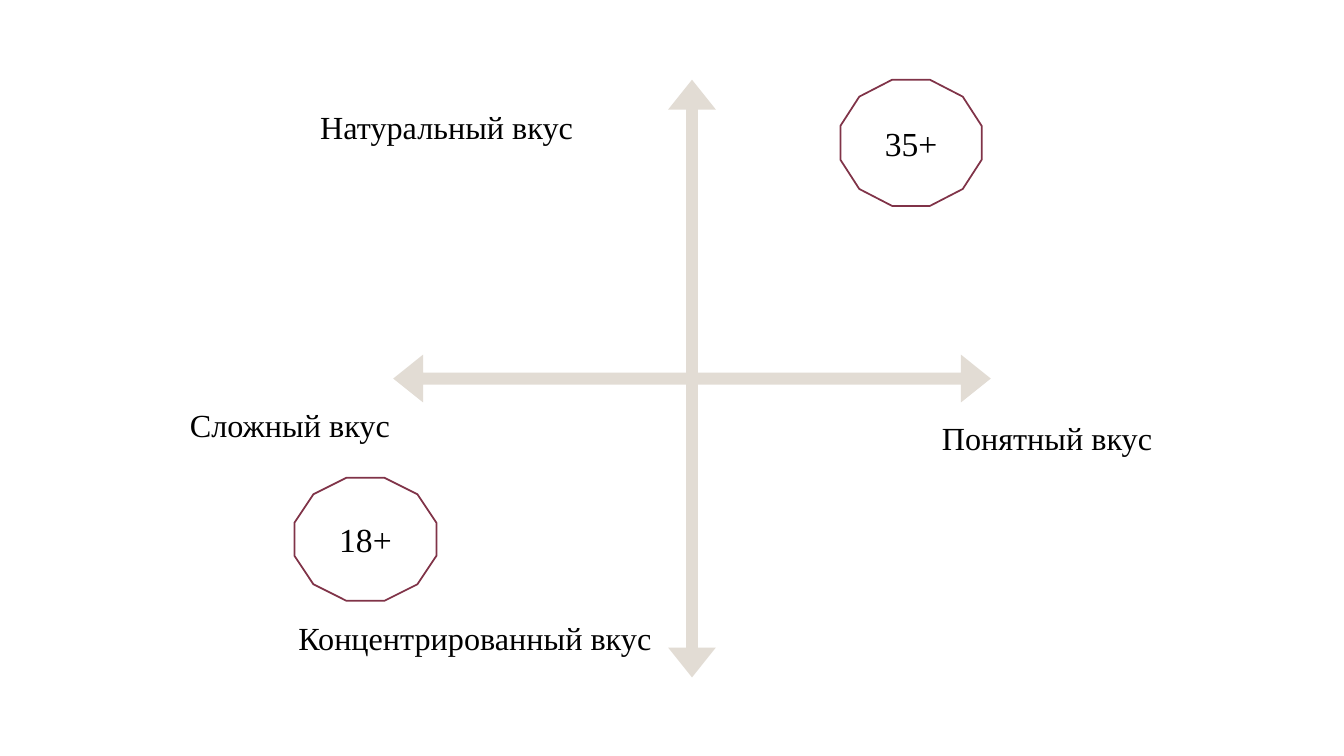
from pptx import Presentation
from pptx.dml.color import RGBColor
from pptx.enum.shapes import MSO_SHAPE
from pptx.enum.text import MSO_ANCHOR, PP_ALIGN
from pptx.util import Cm, Pt

COLORS = {"axes": "E2DCD4", "outline": "803348", "fill": "FFFFFF", "text": "000000"}
FONT = "Times New Roman"

# Left, top, width, height in centimetres; the items are offset from the map corner.
MAP_BOX = (9.91, 2.01, 15.06, 15.06)
AXIS_LABELS = [
    ("Натуральный вкус", (-3.97, 0.2, 10.64, 2.11)),
    ("Сложный вкус", (-7.12, 8.1, 9.04, 1.32)),
    ("Концентрированный вкус", (-3.61, 13.28, 11.35, 1.68)),
    ("Понятный вкус", (11.91, 8.3, 9.14, 1.55)),
]
AGE_GROUPS = [
    ("35+", (11.27, 0, 3.56, 3.18)),
    ("18+", (-2.49, 10.03, 3.58, 3.1)),
]


def color(name):
    return RGBColor.from_string(COLORS[name])


def lengths(box):
    return [Cm(value) for value in box]


def within(parent, box):
    """Shift a box by the corner of its parent."""
    left, top, width, height = box
    return parent[0] + left, parent[1] + top, width, height


def write_text(shape, text, size, paragraph_format):
    frame = shape.text_frame
    frame.word_wrap = True
    frame.vertical_anchor = MSO_ANCHOR.MIDDLE
    paragraph = frame.paragraphs[0]
    paragraph.text = text
    for name, value in {"alignment": PP_ALIGN.CENTER, **paragraph_format}.items():
        setattr(paragraph, name, value)
    font = paragraph.runs[0].font
    for name, value in {"name": FONT, "size": Pt(size)}.items():
        setattr(font, name, value)
    font.color.rgb = color("text")


def add_filled_shape(slide, preset, box, fill):
    shape = slide.shapes.add_shape(preset, *lengths(box))
    shape.shadow.inherit = False
    shape.fill.solid()
    shape.fill.fore_color.rgb = color(fill)
    return shape


def add_axes(slide, box):
    axes = add_filled_shape(slide, MSO_SHAPE.QUAD_ARROW, box, "axes")
    axes.line.fill.background()
    for index, share in enumerate((0.02, 0.04, 0.05)):
        axes.adjustments[index] = share


def add_axis_label(slide, text, box):
    label = slide.shapes.add_textbox(*lengths(box))
    for side in ("left", "top", "right", "bottom"):
        setattr(label.text_frame, f"margin_{side}", Cm(0.25))
    write_text(label, text, 23, {"line_spacing": 0.9})


def add_age_group(slide, text, box):
    badge = add_filled_shape(slide, MSO_SHAPE.DODECAGON, box, "fill")
    badge.line.color.rgb = color("outline")
    badge.line.width = Pt(1.25)
    write_text(badge, text, 24, {})


def add_taste_map(slide, box):
    add_axes(slide, box)
    for text, label_box in AXIS_LABELS:
        add_axis_label(slide, text, within(box, label_box))
    for text, group_box in AGE_GROUPS:
        add_age_group(slide, text, within(box, group_box))


def main():
    presentation = Presentation()
    presentation.slide_width = Cm(33.87)
    presentation.slide_height = Cm(19.05)
    slide = presentation.slides.add_slide(presentation.slide_layouts[6])
    add_taste_map(slide, MAP_BOX)
    presentation.save("out.pptx")


if __name__ == "__main__":
    main()
